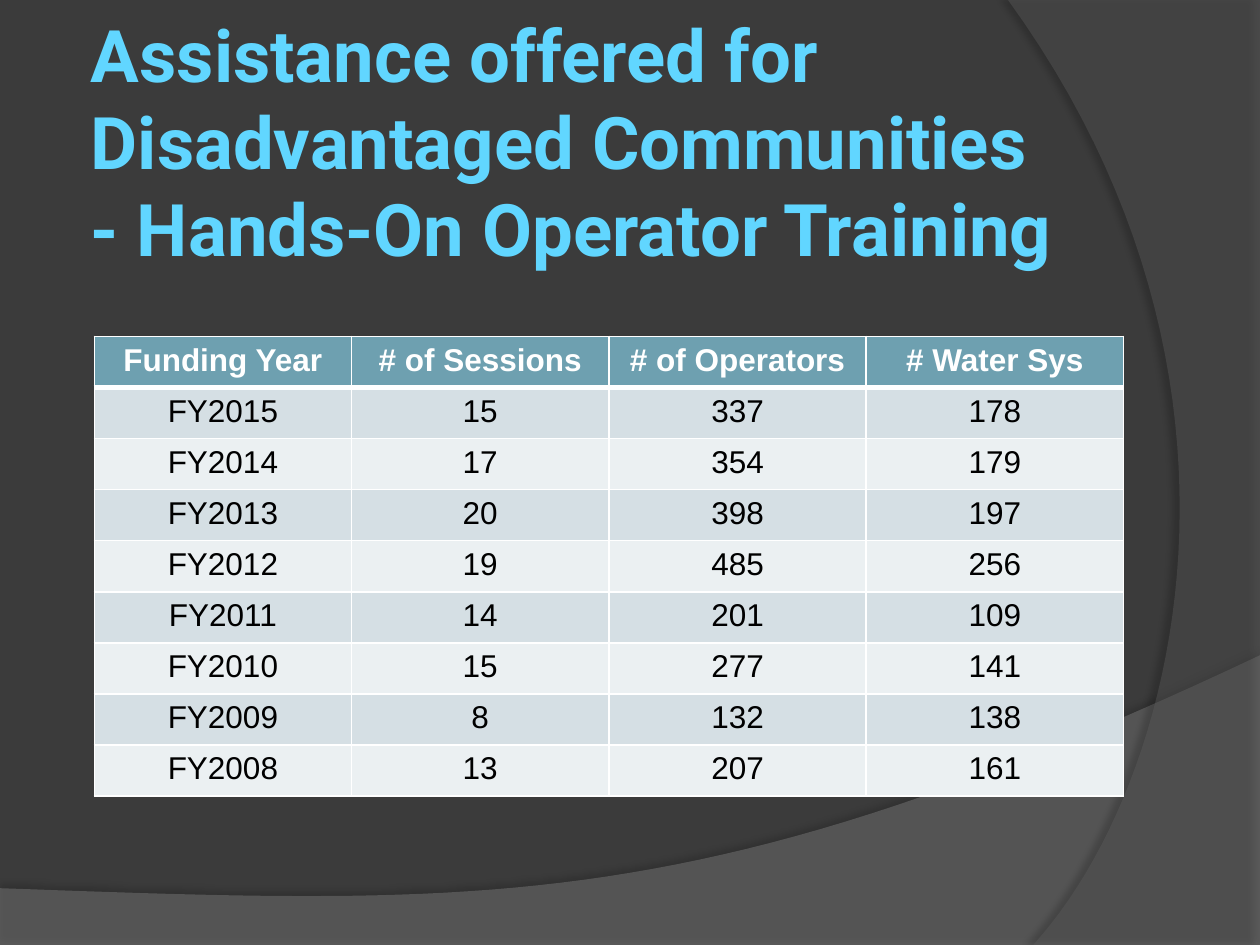
from lxml import etree
from pptx import Presentation
from pptx import util as u
from pptx.dml.color import RGBColor
from pptx.enum import text
from pptx.oxml import ns

ROWS = [
    ("Funding Year", "# of Sessions", "# of Operators", "# Water Sys"),
    ("FY2015", "15", "337", "178"),
    ("FY2014", "17", "354", "179"),
    ("FY2013", "20", "398", "197"),
    ("FY2012", "19", "485", "256"),
    ("FY2011", "14", "201", "109"),
    ("FY2010", "15", "277", "141"),
    ("FY2009", "8", "132", "138"),
    ("FY2008", "13", "207", "161"),
]


def paint(fill, color):
    fill.solid()
    fill.fore_color.rgb = RGBColor.from_string(color)


def sub(parent, tag, **attrs):
    """Append a DrawingML child element."""
    child = etree.SubElement(parent, ns.qn(tag))
    for name, value in attrs.items():
        child.set(name, str(value))
    return child


def style_run(r, font, size, color, bold):
    r.font.name, r.font.size, r.font.bold = font, u.Pt(size), bold
    paint(r.font.fill, color)


def bezier(p0, p1, p2, p3, steps=48):
    for i in range(1, steps + 1):
        t = i / steps
        weights = ((1 - t) ** 3, 3 * t * (1 - t) ** 2, 3 * t * t * (1 - t), t ** 3)
        yield tuple(sum(w * p[axis] for w, p in zip(weights, (p0, p1, p2, p3)))
                    for axis in (0, 1))


def add_swoosh(s, box, corners, curve, color, opacity, shadow):
    """Corners and curve are fractions of the box; the curve leaves the last corner."""
    x, y, w, h = box
    points = [(u.Cm(x + fx * w), u.Cm(y + fy * h))
              for fx, fy in [*corners, *bezier(corners[-1], *curve)]]
    builder = s.shapes.build_freeform(*points[0])
    builder.add_line_segments(points[1:], close=True)
    sp = builder.convert_to_shape()
    sp.line.fill.background()
    paint(sp.fill, color)
    clr = sp.fill._xPr.find(ns.qn("a:solidFill"))[0]
    sub(clr, "a:alpha", val=opacity * 1000)

    alpha, blur, dist, angle = shadow
    sp.shadow.inherit = False
    effects = sp._element.spPr.find(ns.qn("a:effectLst"))
    outer = sub(effects, "a:outerShdw", blurRad=u.Pt(blur), dist=u.Pt(dist),
                dir=angle * 60000, algn="ctr", rotWithShape=0)
    sub(sub(outer, "a:srgbClr", val="000000"), "a:alpha", val=alpha * 1000)


def add_background(s, box):
    x, y, w, h = box
    paint(s.background.fill, "3B3B3B")
    add_swoosh(s, (x, y + 13.21, w, 5.87),
               [(0, 0.8), (0, 1), (1, 1), (1, 0)],
               [(0.56, 0.9), (0.39, 0.86), (0, 0.8)],
               "7F7F7F", 45, (35, 4, 3.5, 270))
    add_swoosh(s, (x + 0.8 * w, y, 0.2 * w, h),
               [(1, 0), (1, 1), (0.1, 1)],
               [(0.68, 0.83), (1.09, 0.4), (0, 0)],
               "5E5E5E", 40, (45, 4, 4, 180))


def add_title(s, box):
    sp = s.shapes.title
    s.shapes._spTree.append(sp._element)  # in front of the background
    sp.left, sp.top, sp.width, sp.height = map(u.Cm, box)
    tf = sp.text_frame
    tf.word_wrap = True
    tf.auto_size = text.MSO_AUTO_SIZE.NONE
    tf.vertical_anchor = text.MSO_ANCHOR.MIDDLE
    tf.margin_left = tf.margin_right = tf.margin_top = u.Cm(0.13)
    tf.margin_bottom = u.Cm(1.88)  # lifts the text by half a line
    p = tf.paragraphs[0]
    p.alignment = text.PP_ALIGN.LEFT
    lines = ("Assistance offered for Disadvantaged Communities",
             "- Hands-On Operator Training")
    for i, line in enumerate(lines):
        if i:
            p.add_line_break()
        r = p.add_run()
        r.text = line
        style_run(r, "Roboto", 41.4, "61D6FF", True)


def add_borders(cell, bottom):
    tcPr = cell._tc.get_or_add_tcPr()
    for side, width in zip("LRTB", (1, 1, 1, bottom)):
        ln = sub(tcPr, f"a:ln{side}", w=u.Pt(width))
        sub(sub(ln, "a:solidFill"), "a:srgbClr", val="FFFFFF")


def add_training_table(s, box):
    x, y, w, h = map(u.Cm, box)
    table = s.shapes.add_table(len(ROWS), len(ROWS[0]), x, y, w, h).table
    for i, values in enumerate(ROWS):
        header = i == 0
        fill = "6EA0B0" if header else ("EBF0F2", "D5DFE4")[i % 2]
        for j, value in enumerate(values):
            cell = table.cell(i, j)
            add_borders(cell, 3 if header else 1)
            paint(cell.fill, fill)
            p = cell.text_frame.paragraphs[0]
            p.alignment = text.PP_ALIGN.CENTER
            r = p.add_run()
            r.text = value
            style_run(r, "Arial", 18, "FFFFFF" if header else "000000", header)


def main():
    prs = Presentation()
    prs.slide_width, prs.slide_height = u.Cm(25.4), u.Cm(19.05)
    s = prs.slides.add_slide(prs.slide_layouts[5])
    add_background(s, (0, 0, 25.4, 19.05))
    add_title(s, (1.7, 2.11, 20.75, 3.18))
    add_training_table(s, (1.9, 6.78, 20.75, 9.27))
    prs.save("out.pptx")


if __name__ == "__main__":
    main()
